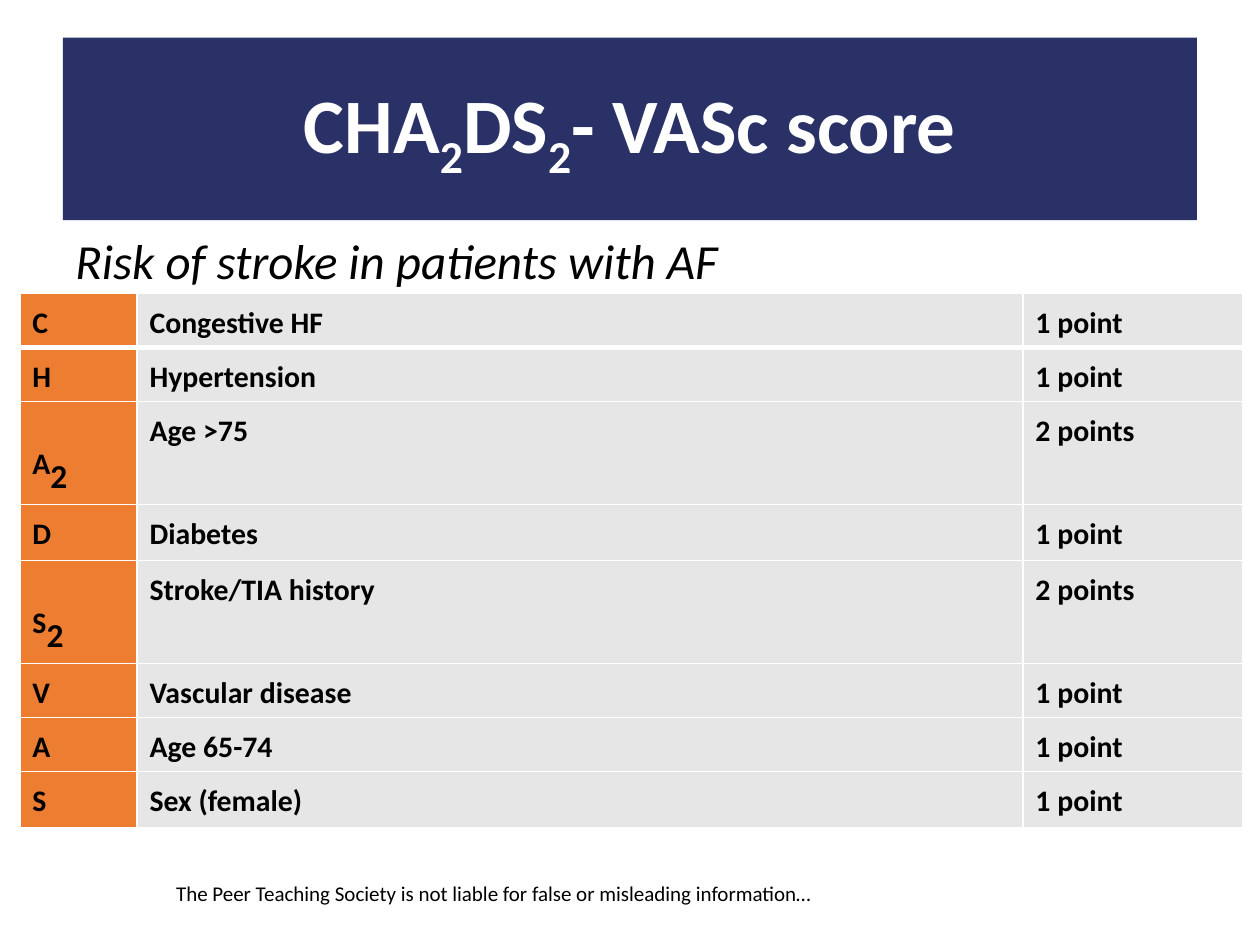
from lxml.etree import SubElement
from pptx import Presentation
from pptx.dml.color import RGBColor
from pptx.enum.shapes import MSO_SHAPE as Preset
from pptx.enum.text import MSO_ANCHOR as Anchor, PP_ALIGN as Align
from pptx.oxml.ns import qn
from pptx.util import Cm, Pt

NAVY = RGBColor(0x29, 0x31, 0x67)
ORANGE = RGBColor(0xED, 0x7D, 0x31)
GREY = RGBColor(0xE7, 0xE6, 0xE6)
WHITE = RGBColor(0xFF, 0xFF, 0xFF)
BLACK = RGBColor(0x00, 0x00, 0x00)

CRITERIA = [
    ("C", "Congestive HF", "1 point"),
    ("H", "Hypertension", "1 point"),
    ("A_2", "Age >75", "2 points"),
    ("D", "Diabetes", "1 point"),
    ("S_2", "Stroke/TIA history", "2 points"),
    ("V", "Vascular disease", "1 point"),
    ("A", "Age 65-74", "1 point"),
    ("S", "Sex (female)", "1 point"),
]
COLUMN_WIDTHS = [2.36, 17.86, 4.44]
ROW_HEIGHTS = [1.04, 1.09, 1.83, 1.12, 1.83, 1.04, 1.09, 1.14]


class ScoreSlide:
    font_name = "Calibri"

    def __init__(self, deck):
        self.slide = deck.slides.add_slide(deck.slide_layouts[6])

    def fill_text(self, frame, text, size, color=BLACK, sub_size=None,
                  paragraph_format=None, **font_format):
        paragraph = frame.paragraphs[0]
        for name, value in (paragraph_format or {}).items():
            setattr(paragraph, name, value)
        for position, part in enumerate(text.split("_")):
            run = paragraph.add_run()
            run.text = part
            lowered = position % 2 == 1
            style = {"name": self.font_name,
                     "size": Pt(sub_size if lowered else size), **font_format}
            for name, value in style.items():
                setattr(run.font, name, value)
            run.font.color.rgb = color
            if lowered:
                run.font._element.set("baseline", "-25000")

    def inset(self, frame, vertical):
        margins = {"margin_left": 0.25, "margin_right": 0.25,
                   "margin_top": vertical, "margin_bottom": vertical}
        for name, value in margins.items():
            setattr(frame, name, Cm(value))
        frame.word_wrap = True

    def banner(self, box, text, **style):
        banner = self.slide.shapes.add_shape(Preset.RECTANGLE, *map(Cm, box))
        banner.shadow.inherit = False
        banner.fill.solid()
        banner.fill.fore_color.rgb = NAVY
        banner.line.fill.background()
        self.inset(banner.text_frame, 0.25)
        banner.text_frame.vertical_anchor = Anchor.MIDDLE
        self.fill_text(banner.text_frame, text, color=WHITE,
                       paragraph_format={"alignment": Align.CENTER}, **style)

    def text(self, box, text, vertical_inset, **style):
        frame = self.slide.shapes.add_textbox(*map(Cm, box)).text_frame
        self.inset(frame, vertical_inset)
        self.fill_text(frame, text, **style)

    def border(self, cell, widths):
        properties = cell._tc.get_or_add_tcPr()
        for side, width in widths.items():
            line = SubElement(properties, qn(f"a:ln{side}"), w=str(Pt(width)))
            fill = SubElement(line, qn("a:solidFill"))
            SubElement(fill, qn("a:srgbClr"), val=str(WHITE))

    def table(self, left, top, rows, widths, heights):
        table = self.slide.shapes.add_table(
            len(rows), len(widths), Cm(left), Cm(top),
            Cm(sum(widths)), Cm(sum(heights))).table
        table.horz_banding = False
        for column, width in zip(table.columns, widths):
            column.width = Cm(width)
        for row, height in zip(table.rows, heights):
            row.height = Cm(height)
        for r, entries in enumerate(rows):
            for c, entry in enumerate(entries):
                cell = table.cell(r, c)
                self.border(cell, {"L": 1, "R": 1, "T": 3 if r == 1 else 1,
                                   "B": 3 if r == 0 else 1})
                cell.fill.solid()
                cell.fill.fore_color.rgb = GREY if c else ORANGE
                self.fill_text(cell.text_frame, entry, 17, sub_size=33,
                               bold=True,
                               paragraph_format={"line_spacing": 1.15})


def main():
    deck = Presentation()
    deck.slide_width, deck.slide_height = Cm(25.4), Cm(19.05)
    score = ScoreSlide(deck)
    score.text((3.3, 17.63, 14.07, 0.76),
               "The Peer Teaching Society is not liable for false or misleading information…",
               0.13, size=12)
    score.banner((1.27, 0.76, 22.86, 3.68), "CHA_2_DS_2_- VASc score",
                 size=44, sub_size=45, bold=True)
    score.text((1.27, 4.45, 22.86, 12.57), "Risk of stroke in patients with AF",
               0.25, size=28, italic=True,
               paragraph_format={"line_spacing": 0.98})
    score.table(0.4, 5.92, CRITERIA, COLUMN_WIDTHS, ROW_HEIGHTS)
    deck.save("out.pptx")


if __name__ == "__main__":
    main()
